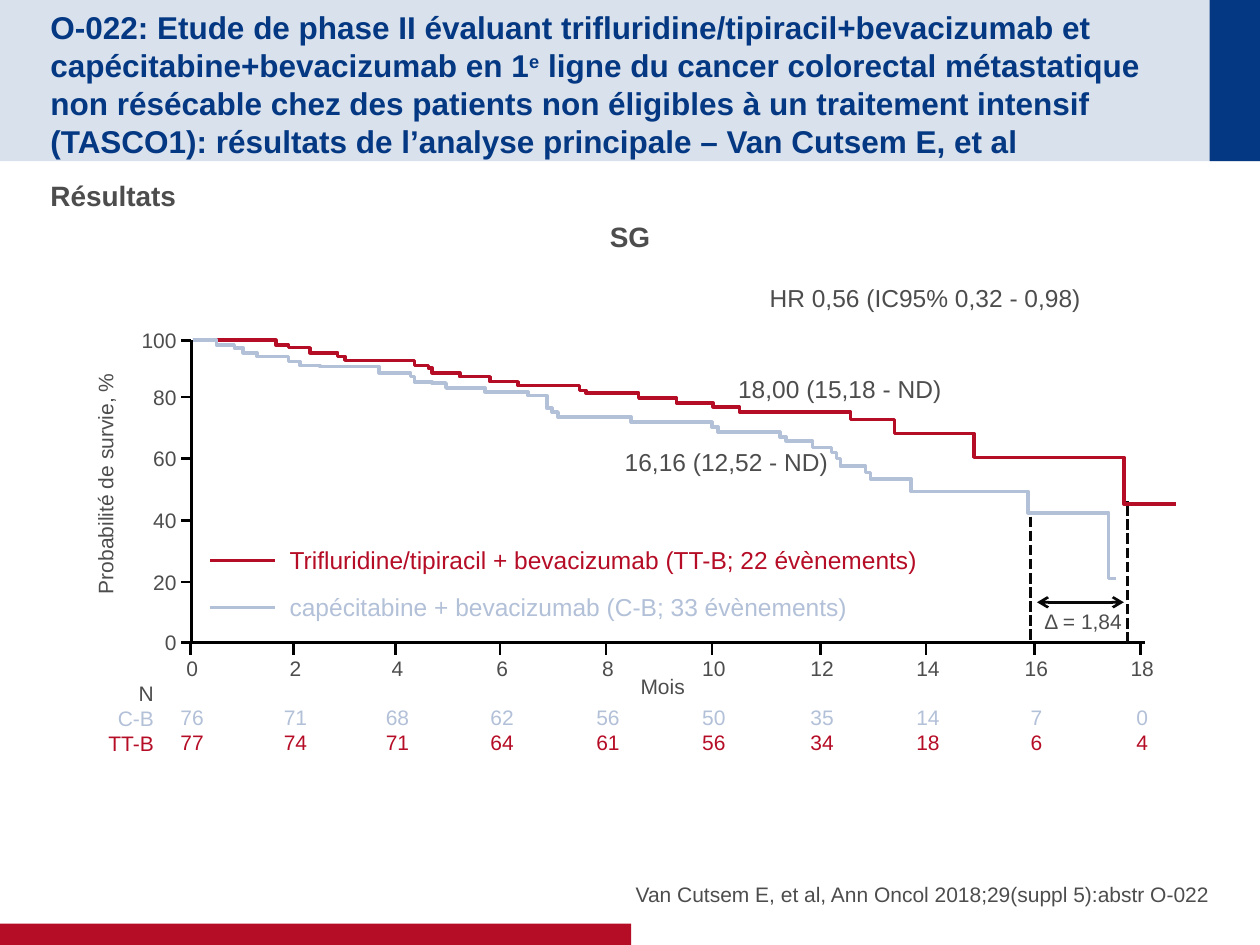
from pptx import Presentation
from pptx.dml.color import RGBColor
from pptx.enum.dml import MSO_LINE
from pptx.enum.shapes import MSO_CONNECTOR, MSO_SHAPE
from pptx.enum.text import MSO_ANCHOR, MSO_AUTO_SIZE, PP_ALIGN
from pptx.oxml.ns import qn
from pptx.util import Pt
from lxml.etree import SubElement

PX = 9144  # 100 px to the inch
NAVY, RED, PALE, GREY, BLACK, DASH = "043882", "B60D27", "B2C0D8", "4D4D4D", "000000", "080808"

Y_TICKS = {100: 0, 80: 45, 60: 94, 40: 143, 20: 192, 0: 240}
X_TICKS = [-1, 81, 162, 245, 329, 413, 499, 583, 669, 753]
MONTHS = range(0, 20, 2)
AT_RISK_CB = [76, 71, 68, 62, 56, 50, 35, 14, 7, 0]
AT_RISK_TTB = [77, 74, 71, 64, 61, 56, 34, 18, 6, 4]

# Each step: where the curve drops, and the level it drops to
TTB_STEPS = [(67, 4), (77, 6), (94, 10), (116, 13), (122, 16), (177, 20), (188, 22),
             (191, 26), (213, 29), (237, 33), (259, 36), (308, 40), (313, 42), (355, 46),
             (385, 50), (414, 53), (435, 57), (523, 63), (558, 74), (621, 93), (740, 130)]
CB_STEPS = [(20, 4), (34, 6), (41, 10), (52, 13), (77, 17), (86, 20), (102, 21), (149, 26),
            (174, 29), (177, 33), (191, 34), (202, 38), (233, 41), (267, 44), (282, 54),
            (286, 57), (291, 61), (349, 65), (413, 69), (418, 73), (467, 77), (472, 80),
            (493, 85), (508, 89), (512, 94), (515, 100), (535, 105), (539, 110),
            (571, 120), (664, 137), (728, 189)]


def emu(*lengths):
    return [length * PX for length in lengths]


def rgb(value):
    return RGBColor.from_string(value)


def set_all(target, values):
    for name, value in values.items():
        setattr(target, name, value)


def write(paragraph, text, color=GREY, size=12, bold=False):
    run = paragraph.add_run()
    run.text = text
    set_all(run.font, {"name": "Arial", "size": Pt(size), "bold": bold})
    run.font.color.rgb = rgb(color)
    return run


def frame_of(shape, insets, anchor):
    left, top, right, bottom = emu(*insets)
    set_all(shape.text_frame, {
        "margin_left": left, "margin_top": top, "margin_right": right, "margin_bottom": bottom,
        "vertical_anchor": anchor, "word_wrap": True, "auto_size": MSO_AUTO_SIZE.NONE})
    return shape.text_frame


def place(shape, box):
    set_all(shape, dict(zip(("left", "top", "width", "height"), emu(*box))))


def label(slide, box, lines, align=PP_ALIGN.LEFT, size=12, anchor=MSO_ANCHOR.TOP):
    """Unwrapped text; lines are (text, colour) pairs."""
    holder = slide.shapes.add_textbox(*emu(*box))
    frame = holder.text_frame
    set_all(frame, {"word_wrap": False, "vertical_anchor": anchor,
                    "auto_size": MSO_AUTO_SIZE.SHAPE_TO_FIT_TEXT})
    for index, (text, color) in enumerate(lines):
        paragraph = frame.add_paragraph() if index else frame.paragraphs[0]
        paragraph.alignment = align
        write(paragraph, text, color, size)
    place(holder, box)
    return holder


def line(slide, start, end, color=BLACK, width=1.5, dashed=False, arrows=False):
    connector = slide.shapes.add_connector(MSO_CONNECTOR.STRAIGHT, *emu(*start, *end))
    connector.line.color.rgb = rgb(color)
    connector.line.width = Pt(width)
    if dashed:
        connector.line.dash_style = MSO_LINE.SQUARE_DOT
    if arrows:
        for end_name in ("a:headEnd", "a:tailEnd"):
            SubElement(connector.line._get_or_add_ln(), qn(end_name), type="arrow")
    SubElement(connector._element.spPr, qn("a:effectLst"))


def outline(slide, origin, points, color, width):
    builder = slide.shapes.build_freeform(*points[0], scale=PX)
    builder.add_line_segments(points[1:], close=False)
    trace = builder.convert_to_shape(*emu(*origin))
    trace.fill.background()
    trace.line.color.rgb = rgb(color)
    trace.line.width = Pt(width)
    trace.shadow.inherit = False


def bands(slide):
    """Coloured bands behind everything else."""
    blocks = [((0, 0, 1000, 128), NAVY, 15), ((960, 0, 40, 128), NAVY, 100),
              ((0, 733, 501, 17), RED, 100)]
    for depth, (box, color, opacity) in enumerate(blocks):
        band = slide.shapes.add_shape(MSO_SHAPE.RECTANGLE, *emu(*box))
        band.fill.solid()
        band.fill.fore_color.rgb = rgb(color)
        band.line.fill.background()
        band.shadow.inherit = False
        if opacity < 100:
            fill = band._element.spPr.find(qn("a:solidFill"))
            SubElement(fill[0], qn("a:alpha"), val=str(opacity * 1000))
        slide.shapes._spTree.insert(2 + depth, band._element)


def heading(title, box):
    place(title, box)
    paragraph = frame_of(title, (0, 5, 0, 0), MSO_ANCHOR.MIDDLE).paragraphs[0]
    paragraph.alignment = PP_ALIGN.LEFT
    parts = ["O-022: Etude de phase II évaluant trifluridine/tipiracil+bevacizumab et "
             "capécitabine+bevacizumab en 1", "e",
             " ligne du cancer colorectal métastatique non résécable chez des patients non "
             "éligibles à un traitement intensif (TASCO1): résultats de l’analyse principale "
             "– Van Cutsem E, et al"]
    runs = [write(paragraph, part, NAVY, 18, True) for part in parts]
    runs[1].font._element.set("baseline", "30000")


def body(holder, box, lines, insets, anchor, size, bold):
    """Unbulleted paragraphs; lines are (text, alignment) pairs."""
    place(holder, box)
    frame = frame_of(holder, insets, anchor)
    for index, (text, align) in enumerate(lines):
        paragraph = frame.add_paragraph() if index else frame.paragraphs[0]
        set_all(paragraph, {"alignment": align, "space_before": Pt(0), "space_after": Pt(4)})
        properties = paragraph._p.get_or_add_pPr()
        properties.set("marL", "0")
        properties.set("indent", "0")
        SubElement(properties, qn("a:buNone"))
        write(paragraph, text, GREY, size, bold)


def survival_plot(slide, box):
    left, top, width, height = box

    def at(x, y):
        return left + x, top + y

    outline(slide, (left, top), [(0, 0), (0, height), (width, height)], BLACK, 1.5)
    for value, y in Y_TICKS.items():
        line(slide, at(-8, y), at(0, y))
        label(slide, (*at(-50, y - 15), 48, 30), [(str(value), GREY)],
              PP_ALIGN.RIGHT, anchor=MSO_ANCHOR.MIDDLE)
    for x, month, cb, ttb in zip(X_TICKS, MONTHS, AT_RISK_CB, AT_RISK_TTB):
        line(slide, at(x, height), at(x, height + 10))
        counts = label(slide, (*at(x - 18, height + 5), 39, 91),
                       [(str(month), GREY), (str(cb), PALE), (str(ttb), RED)], PP_ALIGN.CENTER)
        counts.text_frame.paragraphs[1].space_before = Pt(14)
    label(slide, (*at(-79, height + 25), 59, 71),
          [("N", GREY), ("C-B", PALE), ("TT-B", RED)], PP_ALIGN.RIGHT)
    label(slide, (*at(346, height + 20), 56, 30), [("Mois", GREY)], PP_ALIGN.CENTER)
    y_title = label(slide, (*at(-167, 99), 197, 30),
                    [("Probabilité de survie, %", GREY)], PP_ALIGN.CENTER)
    y_title.rotation = 270

    legend = [(175, 522, "Trifluridine/tipiracil + bevacizumab (TT-B; 22 évènements)", RED),
              (212, 466, "capécitabine + bevacizumab (C-B; 33 évènements)", PALE)]
    for y, length, text, color in legend:
        line(slide, at(15, y), at(66, y), color, 2)
        label(slide, (*at(68, y - 17), length, 34), [(text, color)], size=14)
    estimates = [(449, -50, 274, "HR 0,56 (IC95% 0,32 - 0,98)"),
                 (424, 22, 183, "18,00 (15,18 - ND)"), (334, 80, 183, "16,16 (12,52 - ND)")]
    for x, y, length, text in estimates:
        label(slide, (*at(x, y), length, 34), [(text, GREY)], size=14)

    line(slide, at(743, height), at(743, 128), DASH, 2, dashed=True)
    for steps, end, color in ((TTB_STEPS, 781, RED), (CB_STEPS, 734, PALE)):
        points, level = [(1, 0)], 0
        for x, next_level in steps:
            points += [(x, level), (x, next_level)]
            level = next_level
        outline(slide, (left, top), points + [(end, level)], color, 2)
    line(slide, at(666, 140), at(666, height), DASH, 2, dashed=True)
    line(slide, at(671, 208), at(740, 208), DASH, arrows=True)
    label(slide, (*at(667, 208), 84, 30), [("Δ = 1,84", GREY)])


def main():
    deck = Presentation()
    deck.slide_width, deck.slide_height = emu(1000, 750)
    slide = deck.slides.add_slide(deck.slide_layouts.get_by_name("Two Content"))
    title, results, citation = slide.placeholders
    bands(slide)
    heading(title, (40, 20, 914, 88))
    body(results, (40, 137, 920, 519),
         [("Résultats", PP_ALIGN.LEFT), ("SG", PP_ALIGN.CENTER)],
         (0, 5, 0, 5), MSO_ANCHOR.TOP, 16, True)
    body(citation, (500, 667, 460, 53),
         [("Van Cutsem E, et al, Ann Oncol 2018;29(suppl 5):abstr O-022", PP_ALIGN.RIGHT)],
         (0, 0, 0, 0), MSO_ANCHOR.BOTTOM, 12, False)
    survival_plot(slide, (152, 270, 757, 240))
    deck.save("out.pptx")


if __name__ == "__main__":
    main()
